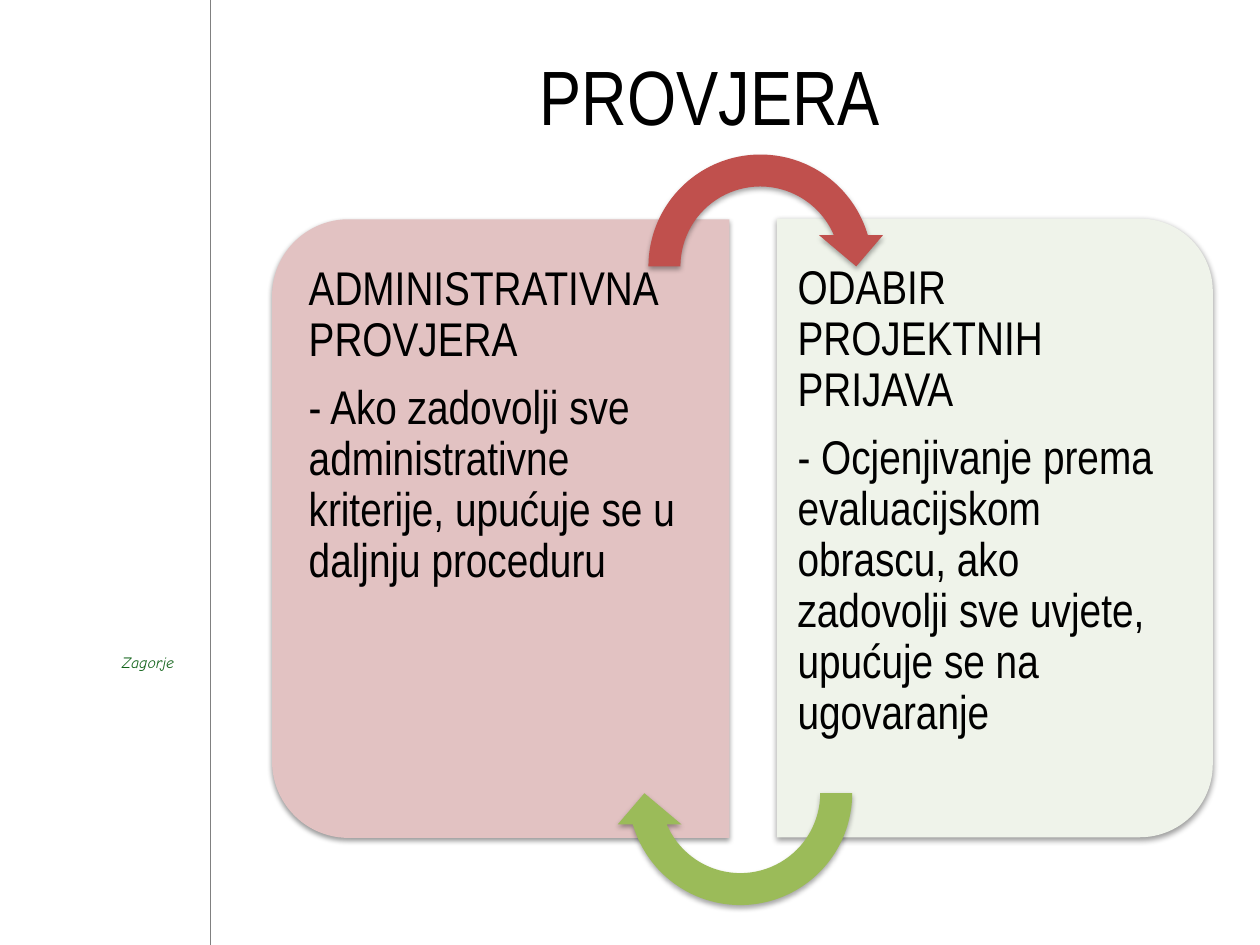
"""Build the slide on the two steps of the check."""
from lxml import etree
from pptx import Presentation
from pptx.dml.color import RGBColor
from pptx.enum.shapes import MSO_CONNECTOR, MSO_SHAPE
from pptx.enum.text import MSO_ANCHOR, PP_ALIGN
from pptx.oxml import parse_xml
from pptx.oxml.ns import nsdecls, qn
from pptx.util import Inches, Pt

LINE = MSO_CONNECTOR.STRAIGHT
RECT = MSO_SHAPE.RECTANGLE
PANEL = MSO_SHAPE.ROUND_2_SAME_RECTANGLE
ARROW = MSO_SHAPE.CIRCULAR_ARROW
TOP, MIDDLE = MSO_ANCHOR.TOP, MSO_ANCHOR.MIDDLE
LEFT, CENTER = PP_ALIGN.LEFT, PP_ALIGN.CENTER

BLACK = RGBColor(0x00, 0x00, 0x00)
WHITE = RGBColor(0xFF, 0xFF, 0xFF)
GRAY = RGBColor(0x80, 0x80, 0x80)
FOREST = RGBColor(0x11, 0x63, 0x19)
PINK = RGBColor(0xE2, 0xC2, 0xC2)
PALE = RGBColor(0xEF, 0xF3, 0xEA)
RED = RGBColor(0xC0, 0x50, 0x4D)
GREEN = RGBColor(0x9B, 0xBB, 0x59)

HEAD = {"name": "Arial Narrow", "size": Pt(44)}
BODY = {"name": "Arial Narrow", "size": Pt(27)}
LABEL = {"name": "Comic Neue", "size": Pt(9), "italic": True}
SPACED = {"line_spacing": 0.9, "space_after": Pt(9.45)}
ROUND = (0.167, 0)
CURVE = (0.125, 11.423, 204.577, 108, 0.125)

CARDS = (
    ((1.52, 2.38, 4.91, 3.63), 270, PINK, (2.34, 1.91, 3.45, 4.56), (0.11, 0.17),
     ("ADMINISTRATIVNA PROVJERA",
      "- Ako zadovolji sve administrativne kriterije, upućuje se u daljnju proceduru")),
    ((5.44, 2.46, 4.91, 3.46), 90, PALE, (6.16, 1.9, 3.29, 4.58), (0.17, 0.11),
     ("ODABIR PROJEKTNIH PRIJAVA",
      "- Ocjenjivanje prema evaluacijskom obrascu, ako zadovolji sve uvjete, "
      "upućuje se na ugovaranje")),
)
ARROWS = (((5.02, 1.1, 2.03, 2.03), 0, RED), ((4.86, 5.28, 2.03, 2.03), 180, GREEN))


def scale(box):
    """Turn a tuple of inches into lengths."""
    return [Inches(part) for part in box]


def apply(target, values):
    """Set each named value on the target."""
    for name, value in values.items():
        setattr(target, name, value)


def write(frame, lines, font, color, spacing):
    """Fill a text frame with styled paragraphs."""
    for index, line in enumerate(lines):
        para = frame.add_paragraph() if index else frame.paragraphs[0]
        para.text = line
        apply(para, spacing)
        apply(para.font, font)
        para.font.color.rgb = color


def add_shade(shape, alpha, dist):
    """Give a shape a soft shadow that falls straight down."""
    shape.shadow.inherit = False
    effects = shape._element.spPr.find(qn("a:effectLst"))
    effects.append(parse_xml(
        f'<a:outerShdw {nsdecls("a")} blurRad="{Pt(3.1)}" dist="{Pt(dist)}" '
        f'dir="5400000" rotWithShape="0"><a:srgbClr val="000000">'
        f'<a:alpha val="{alpha * 1000}"/></a:srgbClr></a:outerShdw>'))


def add_form(slide, kind, box, turn, fill, adjust, alpha, dist):
    """Add a turned, filled preset shape with a shadow."""
    shape = slide.shapes.add_shape(kind, *scale(box))
    shape.rotation = turn
    for index, value in enumerate(adjust):
        shape.adjustments[index] = value
    shape.fill.solid()
    shape.fill.fore_color.rgb = fill
    shape.line.fill.background()
    add_shade(shape, alpha, dist)


def add_text(slide, box, sides, lines):
    """Add the wrapped text of one card."""
    frame = slide.shapes.add_textbox(*scale(box)).text_frame
    left, right = scale(sides)
    apply(frame, {"word_wrap": True, "vertical_anchor": TOP,
                  "margin_left": left, "margin_right": right,
                  "margin_top": Inches(0.19), "margin_bottom": Inches(0.19)})
    write(frame, lines, BODY, BLACK, SPACED)


def add_rule(slide):
    """Add the upright rule of the side strip."""
    rule = slide.shapes.add_connector(LINE, *scale((1.67, 0, 1.67, 7.5)))
    rule.line.color.rgb = GRAY
    rule.line.width = Pt(0.75)
    etree.SubElement(rule._element.spPr, qn("a:effectLst"))


def add_label(slide):
    """Add the place name in the side strip."""
    label = slide.shapes.add_shape(RECT, *scale((0.87, 5.13, 0.76, 0.39)))
    label.shadow.inherit = False
    label.fill.solid()
    label.fill.fore_color.rgb = WHITE
    label.line.color.rgb = WHITE
    label.line.width = Pt(0.75)
    label.text_frame.vertical_anchor = TOP
    write(label.text_frame, ["Zagorje"], LABEL, FOREST, {"alignment": LEFT})


def set_title(slide):
    """Place and format the title."""
    title = slide.shapes.title
    apply(title, dict(zip(("left", "top", "width", "height"),
                          scale((1.77, 0.13, 7.73, 1.25)))))
    title.text_frame.vertical_anchor = MIDDLE
    write(title.text_frame, ["PROVJERA"], HEAD, BLACK, {"alignment": CENTER})


def main():
    """Build and save the slide."""
    deck = Presentation()
    deck.slide_width, deck.slide_height = scale((10, 7.5))
    slide = deck.slides.add_slide(deck.slide_layouts[5])
    add_rule(slide)
    add_label(slide)
    set_title(slide)
    for box, turn, fill, place, sides, lines in CARDS:
        add_form(slide, PANEL, box, turn, fill, ROUND, 38, 1.6)
        add_text(slide, place, sides, lines)
    for box, turn, fill in ARROWS:
        add_form(slide, ARROW, box, turn, fill, CURVE, 35, 1.8)
    deck.save("out.pptx")


if __name__ == "__main__":
    main()
